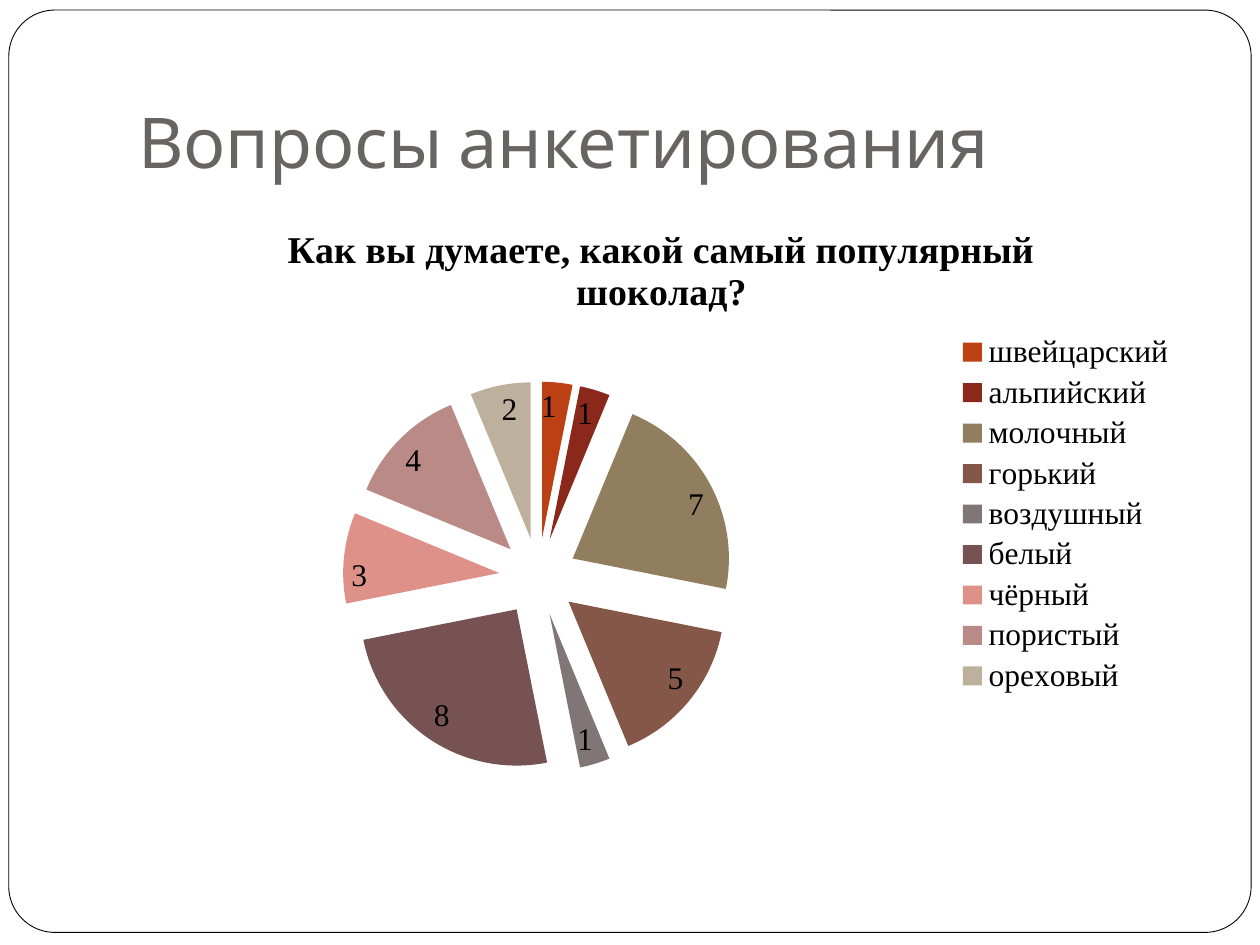
"""Build a survey slide with an exploded pie chart of chocolate preferences."""
import lxml.etree
import pptx
import pptx.chart.data
import pptx.dml.color
import pptx.enum.chart
import pptx.enum.shapes
import pptx.enum.text
import pptx.oxml.ns
import pptx.util

Inches = pptx.util.Inches
Pt = pptx.util.Pt
qn = pptx.oxml.ns.qn


def paint(color_format, color):
    color_format.rgb = pptx.dml.color.RGBColor.from_string(color)


def style(target, values):
    for attribute, value in values.items():
        setattr(target, attribute, value)


deck = pptx.Presentation()
style(deck, {"slide_width": Inches(10), "slide_height": Inches(7.5)})
slide = deck.slides.add_slide(deck.slide_layouts[6])

frame = slide.shapes.add_shape(
    pptx.enum.shapes.MSO_SHAPE.ROUNDED_RECTANGLE,
    Inches(0.07), Inches(0.08), Inches(9.86), Inches(7.32))
frame.adjustments[0] = 0.05
frame.shadow.inherit = False
frame.fill.solid()
paint(frame.fill.fore_color, "FFFFFF")
paint(frame.line.color, "000000")
frame.line.width = Pt(0.5)

heading = slide.shapes.add_textbox(
    Inches(1), Inches(0.3), Inches(8.5), Inches(1.25)).text_frame
style(heading, {
    "text": "Вопросы анкетирования",
    "word_wrap": True,
    "vertical_anchor": pptx.enum.text.MSO_ANCHOR.BOTTOM,
    "margin_left": Inches(0.1),
    "margin_right": Inches(0.1),
    "margin_top": Inches(0.05),
    "margin_bottom": Inches(0.1),
})
heading_font = heading.paragraphs[0].runs[0].font
style(heading_font, {"name": "Cabin", "size": Pt(40)})
paint(heading_font.color, "696464")

question = "Как вы думаете, какой самый популярный шоколад?"
answers = [
    ("швейцарский ", 1, "BC4014"),
    ("альпийский", 1, "8A281C"),
    ("молочный ", 7, "907E5E"),
    ("горький ", 5, "855748"),
    ("воздушный ", 1, "817677"),
    ("белый ", 8, "765252"),
    ("чёрный ", 3, "DE9188"),
    ("пористый ", 4, "B98A86"),
    ("ореховый ", 2, "BDB09D"),
]
kinds, votes, colors = zip(*answers)
survey = pptx.chart.data.CategoryChartData()
survey.categories = kinds
survey.add_series(question, votes)
chart = slide.shapes.add_chart(
    pptx.enum.chart.XL_CHART_TYPE.PIE,
    Inches(1), Inches(1.58), Inches(8.5), Inches(5), survey).chart
style(chart.font, {"name": "Times New Roman", "size": Pt(18)})
paint(chart.font.color, "000000")

chart.has_title = True
chart.chart_title.include_in_layout = False
chart.chart_title.text_frame.text = question
question_font = chart.chart_title.text_frame.paragraphs[0].runs[0].font
style(question_font, {"name": "Times New Roman", "size": Pt(21.6), "bold": True})
paint(question_font.color, "000000")

chart.has_legend = True
style(chart.legend, {
    "position": pptx.enum.chart.XL_LEGEND_POSITION.RIGHT,
    "include_in_layout": False,
})

pie = chart.plots[0]
style(pie, {"vary_by_categories": True, "has_data_labels": True})
style(pie.data_labels, {
    "show_value": True,
    "show_percentage": False,
    "position": pptx.enum.chart.XL_LABEL_POSITION.INSIDE_END,
})
series = pie.series[0]
explosion = lxml.etree.Element(qn("c:explosion"), val="25")
series._element.find(qn("c:tx")).addnext(explosion)
for index, color in enumerate(colors):
    slice_fill = series.points[index].format.fill
    slice_fill.solid()
    paint(slice_fill.fore_color, color)

plot_area = chart._chartSpace.chart.plotArea
for empty_layout in plot_area.findall(qn("c:layout")):
    plot_area.remove(empty_layout)
layout = lxml.etree.Element(qn("c:layout"))
plot_area.insert(0, layout)
placement = lxml.etree.SubElement(layout, qn("c:manualLayout"))
for setting, value in {
    "layoutTarget": "inner", "xMode": "edge", "yMode": "edge",
    "x": "0.2", "y": "0.29", "w": "0.37", "h": "0.62",
}.items():
    lxml.etree.SubElement(placement, qn(f"c:{setting}"), val=value)

deck.save("out.pptx")
